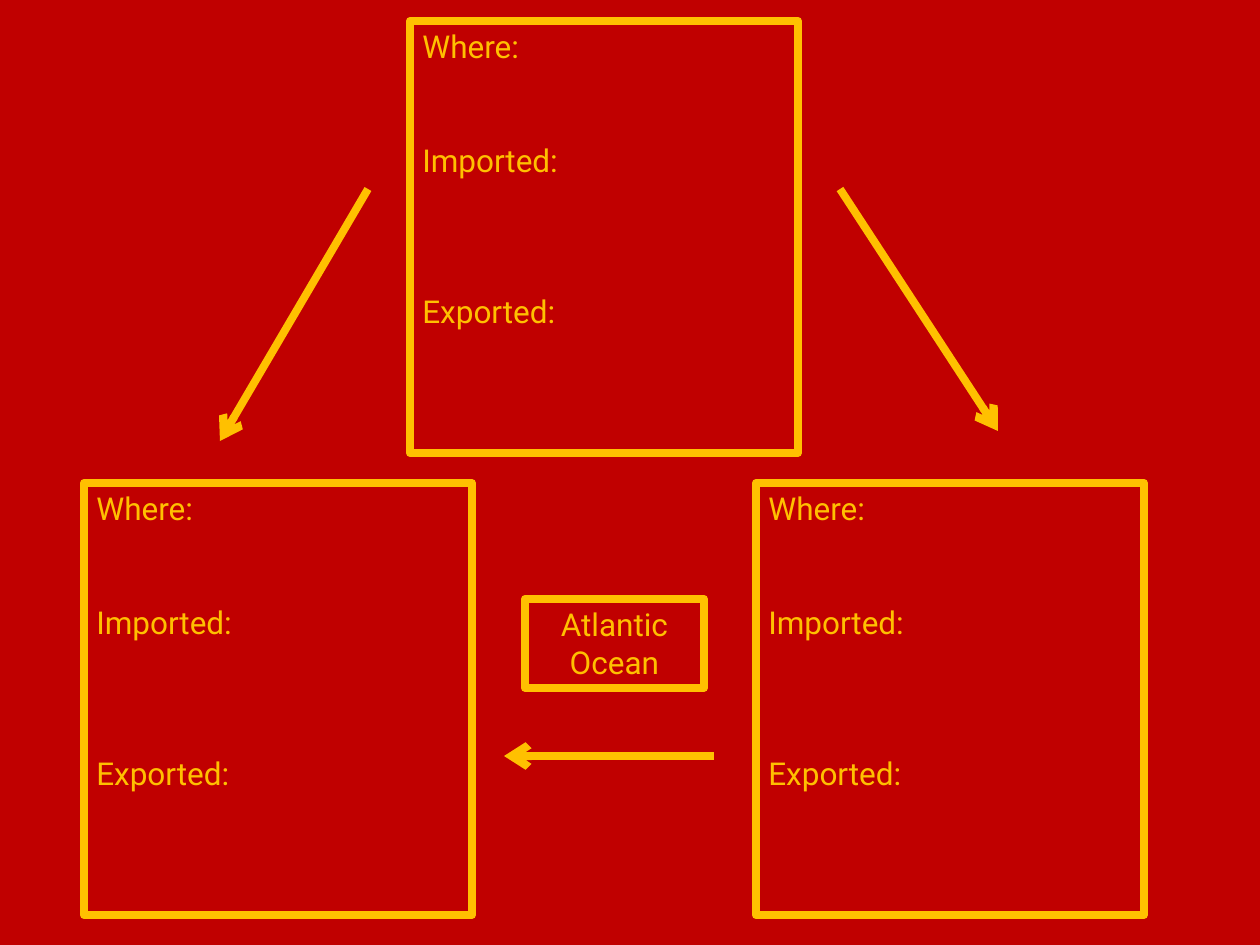
"""Build a triangular trade worksheet: three region boxes, three arrows and an ocean label."""
from dataclasses import dataclass

from lxml.etree import SubElement
from pptx import Presentation
from pptx.dml.color import RGBColor
from pptx.enum.shapes import MSO_CONNECTOR as Connector
from pptx.enum.text import PP_ALIGN as Align
from pptx.oxml.ns import qn
from pptx.util import Emu, Pt

PX_PER_INCH = 126


@dataclass(frozen=True)
class Theme:
    background: RGBColor = RGBColor(0xC0, 0x00, 0x00)
    gold: RGBColor = RGBColor(0xFF, 0xC0, 0x00)
    font: str = "Roboto"
    text_size: float = 18
    line_width: float = 4.5


@dataclass(frozen=True)
class Line:
    text: str
    space_before: int = 0


@dataclass(frozen=True)
class Panel:
    left: int
    top: int
    width: int
    height: int
    lines: tuple[Line, ...]
    align: Align = Align.LEFT


@dataclass(frozen=True)
class Arrow:
    start: tuple[int, int]
    end: tuple[int, int]


THEME = Theme()
REGION_SIZE = (388, 432)
REGION_CORNERS = ((410, 21), (84, 483), (756, 483))
REGION_LINES = (Line("Where:"), Line("Imported:", 76), Line("Exported:", 113))
OCEAN = Panel(525, 599, 179, 89, (Line("Atlantic Ocean"),), Align.CENTER)
ARROWS = (
    Arrow((368, 189), (220, 441)),
    Arrow((840, 189), (998, 431)),
    Arrow((714, 756), (504, 756)),
)


def px(length: int) -> Emu:
    return Emu(round(length * 914400 / PX_PER_INCH))


def style_line(shape) -> None:
    shape.line.color.rgb = THEME.gold
    shape.line.width = Pt(THEME.line_width)


def draw_panel(page, panel: Panel) -> None:
    box = page.shapes.add_textbox(
        px(panel.left), px(panel.top), px(panel.width), px(panel.height)
    )
    style_line(box)
    frame = box.text_frame
    frame.word_wrap = True
    frame.text = "\n".join(line.text for line in panel.lines)
    for para, line in zip(frame.paragraphs, panel.lines):
        para.alignment = panel.align
        para.space_before = px(line.space_before)
        for span in para.runs:
            span.font.name = THEME.font
            span.font.size = Pt(THEME.text_size)
            span.font.color.rgb = THEME.gold


def draw_arrow(page, arrow: Arrow) -> None:
    ends = (px(length) for length in arrow.start + arrow.end)
    connector = page.shapes.add_connector(Connector.STRAIGHT, *ends)
    style_line(connector)
    properties = connector._element.spPr
    SubElement(properties.find(qn("a:ln")), qn("a:tailEnd"), type="arrow")
    SubElement(properties, qn("a:effectLst"))


def main() -> None:
    deck = Presentation()
    deck.slide_width, deck.slide_height = px(1260), px(945)
    page = deck.slides.add_slide(deck.slide_layouts[6])
    page.background.fill.solid()
    page.background.fill.fore_color.rgb = THEME.background
    for corner in REGION_CORNERS:
        draw_panel(page, Panel(*corner, *REGION_SIZE, REGION_LINES))
    for arrow in ARROWS:
        draw_arrow(page, arrow)
    draw_panel(page, OCEAN)
    deck.save("out.pptx")


if __name__ == "__main__":
    main()
